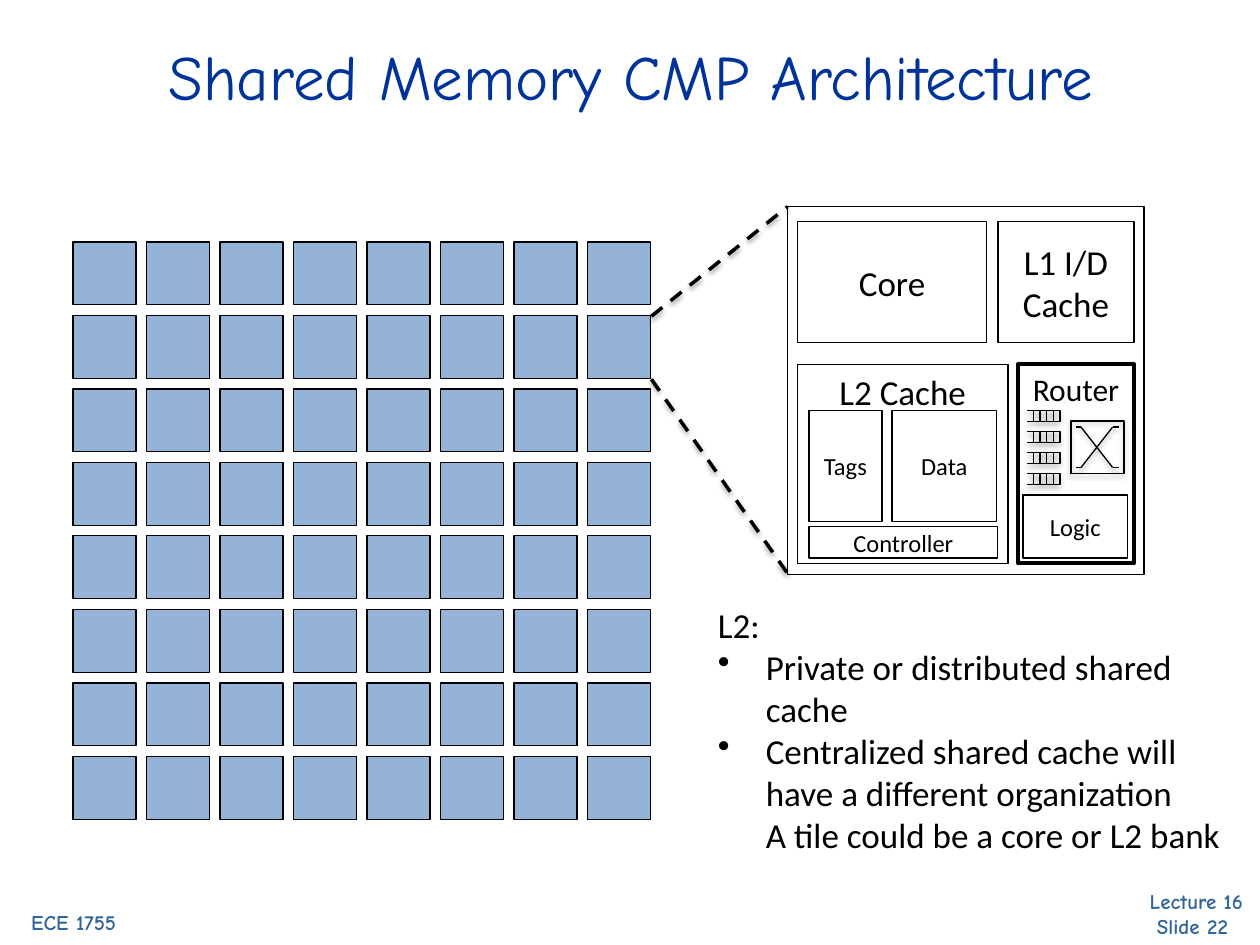
from typing import NamedTuple

from lxml.etree import SubElement
from pptx import Presentation
from pptx.dml.color import RGBColor
from pptx.enum.dml import MSO_LINE
from pptx.enum.shapes import MSO_CONNECTOR, MSO_SHAPE
from pptx.enum.text import MSO_ANCHOR, PP_ALIGN
from pptx.oxml.ns import qn
from pptx.util import Inches, Pt

BLACK = RGBColor(0x00, 0x00, 0x00)
TILE_BLUE = RGBColor(0x95, 0xB3, 0xD7)
TITLE_BLUE = RGBColor(0x00, 0x33, 0x99)
FOOTER_BLUE = RGBColor(0x33, 0x66, 0x99)
BODY_FONT = "Calibri"
HEADING_FONT = "Comic Neue"

GRID_SIZE = 8
TILE_SIZE = 0.5
TILE_PITCH = 7 / 12
GRID_LEFT, GRID_TOP = 0.58, 1.92
QUEUE_COUNT = 4
QUEUE_LEFT, QUEUE_TOP, QUEUE_PITCH = 8.2, 3.26, 1 / 6
SLOT_COUNT = 4
SLOT_WIDTH, SLOT_HEIGHT = 0.053, 0.085


class Box(NamedTuple):
    left: float
    top: float
    width: float
    height: float


class Block(NamedTuple):
    box: Box
    label: str = ""
    size: int = 20
    anchor: MSO_ANCHOR = MSO_ANCHOR.MIDDLE
    border: float = 0.75


class Segment(NamedTuple):
    x1: float
    y1: float
    x2: float
    y2: float


class Heading(NamedTuple):
    box: Box
    text: str
    size: int
    color: RGBColor
    bold: bool


class Note(NamedTuple):
    text: str
    indent: float = 0
    bullet: bool = False


BLOCKS = [
    Block(Box(6.25, 1.64, 2.83, 2.92)),
    Block(Box(6.33, 1.76, 1.5, 0.96), "Core"),
    Block(Box(7.92, 1.76, 1.08, 0.96), "L1 I/D Cache"),
    Block(Box(6.33, 2.89, 1.67, 1.58), "L2 Cache", 20, MSO_ANCHOR.TOP),
    Block(Box(8.08, 2.89, 0.92, 1.58), "Router", 18, MSO_ANCHOR.TOP, 2.5),
    Block(Box(6.42, 3.26, 0.58, 0.88), "Tags", 14),
    Block(Box(7.08, 3.26, 0.83, 0.88), "Data", 14),
    Block(Box(6.42, 4.18, 1.5, 0.25), "Controller", 14),
    Block(Box(8.12, 3.93, 0.83, 0.5), "Logic", 14),
]
CROSSBAR_BOX = Box(8.5, 3.34, 0.42, 0.42)
CROSSBAR_WIRES = [
    Segment(8.58, 3.39, 8.83, 3.71),
    Segment(8.58, 3.71, 8.83, 3.39),
    Segment(8.83, 3.39, 8.88, 3.39),
    Segment(8.83, 3.71, 8.88, 3.71),
    Segment(8.54, 3.39, 8.58, 3.39),
    Segment(8.54, 3.71, 8.58, 3.71),
]
ZOOM_LINES = [Segment(5.17, 2.51, 6.25, 1.64), Segment(5.17, 3.01, 6.25, 4.55)]
HEADINGS = [
    Heading(Box(8.83, 7, 1.33, 0.5), "Lecture 16\vSlide 22 ", 12, FOOTER_BLUE, True),
    Heading(Box(-0.08, 7.17, 1.33, 0.3), "ECE 1755", 12, FOOTER_BLUE, True),
    Heading(Box(0.38, 0.25, 9.25, 0.67), "Shared Memory CMP Architecture", 36, TITLE_BLUE, False),
]
NOTES_BOX = Box(5.6, 4.74, 4.4, 2.12)
NOTES = [
    Note("L2:"),
    Note("Private or distributed shared cache", 0.38, True),
    Note("Centralized shared cache will have a different organization", 0.38, True),
    Note("A tile could be a core or L2 bank", 0.38),
]


def inches(lengths: tuple) -> list:
    return [Inches(length) for length in lengths]


def style_font(paragraph, name: str, size: int, color: RGBColor, bold: bool = False) -> None:
    font = paragraph.font
    font.name, font.size, font.bold = name, Pt(size), bold
    font.color.rgb = color


def set_shadow(shape, opacity: int = 0, distance: float = 0) -> None:
    effects = SubElement(shape.element.spPr, qn("a:effectLst"))
    if opacity:
        shadow = SubElement(
            effects, qn("a:outerShdw"), blurRad=str(Pt(3.1)), dist=str(Pt(distance)),
            dir=str(90 * 60000), rotWithShape="0",
        )
        color = SubElement(shadow, qn("a:srgbClr"), val=str(BLACK))
        SubElement(color, qn("a:alpha"), val=str(opacity * 1000))


def draw_box(shapes, box: Box, fill: RGBColor | None = None, border: float = 0.75,
             shadowed: bool = False):
    rectangle = shapes.add_shape(MSO_SHAPE.RECTANGLE, *inches(box))
    if fill is None:
        rectangle.fill.background()
    else:
        rectangle.fill.solid()
        rectangle.fill.fore_color.rgb = fill
    rectangle.line.color.rgb = BLACK
    rectangle.line.width = Pt(border)
    set_shadow(rectangle, 35 if shadowed else 0, 1.8)
    return rectangle


def draw_line(shapes, segment: Segment, width: float = 0.75, dashed: bool = False) -> None:
    connector = shapes.add_connector(MSO_CONNECTOR.STRAIGHT, *inches(segment))
    connector.line.color.rgb = BLACK
    connector.line.width = Pt(width)
    if dashed:
        connector.line.dash_style = MSO_LINE.DASH
    set_shadow(connector, 38, 1.6)


def draw_block(shapes, block: Block) -> None:
    rectangle = draw_box(shapes, block.box, border=block.border)
    if block.label:
        frame = rectangle.text_frame
        frame.text, frame.word_wrap = block.label, True
        frame.vertical_anchor = block.anchor
        frame.paragraphs[0].alignment = PP_ALIGN.CENTER
        style_font(frame.paragraphs[0], BODY_FONT, block.size, BLACK)


def draw_queue(shapes, top: float) -> None:
    queue = shapes.add_group_shape().shapes
    for slot in range(SLOT_COUNT):
        draw_box(queue, Box(QUEUE_LEFT + slot * SLOT_WIDTH, top, SLOT_WIDTH, SLOT_HEIGHT),
                 shadowed=True)
    for y in (top, top + SLOT_HEIGHT):
        draw_line(queue, Segment(QUEUE_LEFT, y, QUEUE_LEFT - SLOT_WIDTH, y))


def draw_crossbar(shapes) -> None:
    crossbar = shapes.add_group_shape().shapes
    for wire in CROSSBAR_WIRES:
        draw_line(crossbar, wire)
    draw_box(crossbar, CROSSBAR_BOX, shadowed=True)


def add_text_frame(shapes, box: Box):
    frame = shapes.add_textbox(*inches(box)).text_frame
    frame.word_wrap = True
    return frame


def draw_heading(shapes, heading: Heading) -> None:
    frame = add_text_frame(shapes, heading.box)
    frame.text = heading.text
    frame.paragraphs[0].alignment = PP_ALIGN.CENTER
    style_font(frame.paragraphs[0], HEADING_FONT, heading.size, heading.color, heading.bold)


def draw_notes(shapes) -> None:
    frame = add_text_frame(shapes, NOTES_BOX)
    for index, note in enumerate(NOTES):
        paragraph = frame.add_paragraph() if index else frame.paragraphs[0]
        paragraph.text = note.text
        style_font(paragraph, BODY_FONT, 20, BLACK)
        properties = paragraph._p.get_or_add_pPr()
        properties.set("marL", str(Inches(note.indent)))
        if note.bullet:
            properties.set("indent", str(-Inches(note.indent)))
            bullet = properties.makeelement(qn("a:buChar"), {"char": "•"})
            properties.insert(0, bullet)


def main() -> None:
    deck = Presentation()
    deck.slide_width, deck.slide_height = Inches(10), Inches(7.5)
    shapes = deck.slides.add_slide(deck.slide_layouts[6]).shapes
    for heading in HEADINGS:
        draw_heading(shapes, heading)
    for row in range(GRID_SIZE):
        for column in range(GRID_SIZE):
            draw_box(shapes, Box(GRID_LEFT + column * TILE_PITCH, GRID_TOP + row * TILE_PITCH,
                                 TILE_SIZE, TILE_SIZE), TILE_BLUE)
    for block in BLOCKS:
        draw_block(shapes, block)
    for queue in range(QUEUE_COUNT):
        draw_queue(shapes, QUEUE_TOP + queue * QUEUE_PITCH)
    draw_crossbar(shapes)
    for segment in ZOOM_LINES:
        draw_line(shapes, segment, 2, dashed=True)
    draw_notes(shapes)
    deck.save("out.pptx")


if __name__ == "__main__":
    main()
